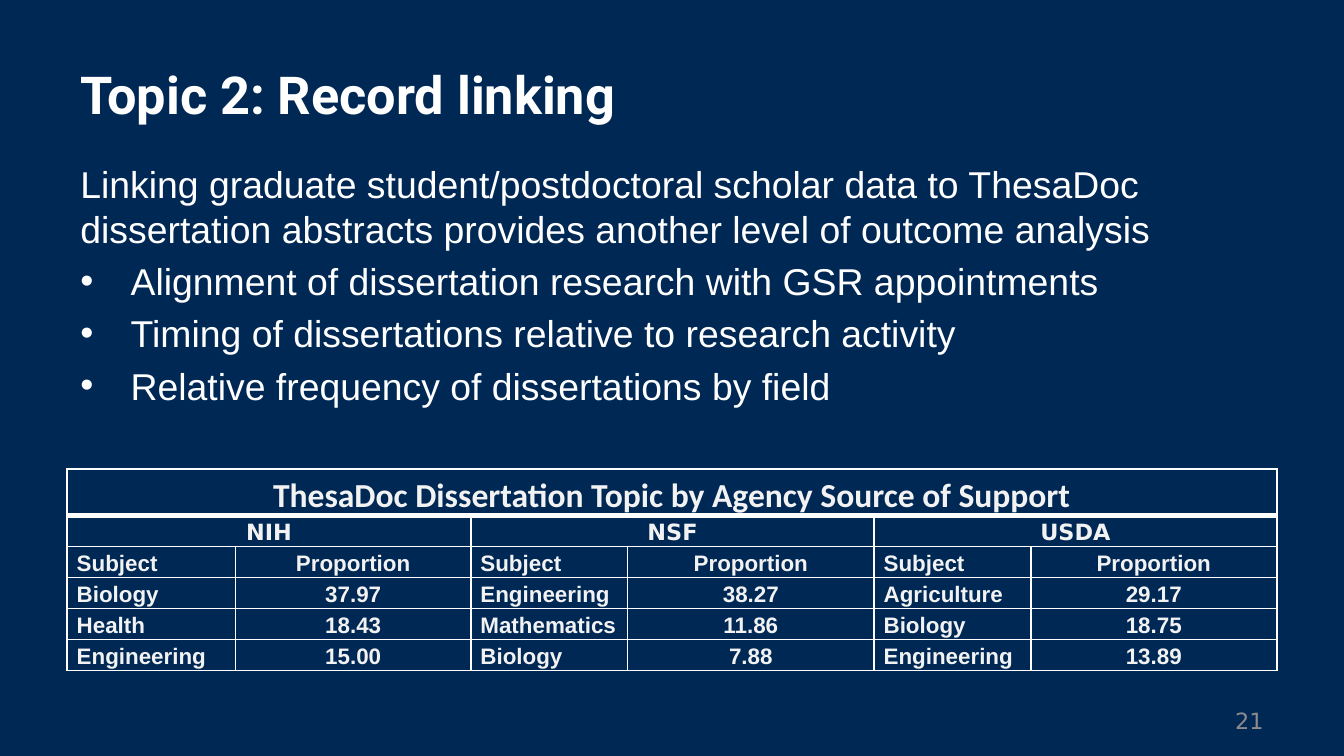
from dataclasses import dataclass

from lxml import etree
from pptx import Presentation
from pptx.dml.color import RGBColor
from pptx.enum.text import MSO_ANCHOR, PP_ALIGN
from pptx.oxml.ns import qn
from pptx.util import Cm, Pt

LEFT, CENTER, RIGHT = PP_ALIGN.LEFT, PP_ALIGN.CENTER, PP_ALIGN.RIGHT
TOP, MIDDLE = MSO_ANCHOR.TOP, MSO_ANCHOR.MIDDLE


@dataclass(frozen=True)
class Theme:
    background: str = "002855"
    text: str = "FFFFFF"
    table_text: str = "F2F2F2"
    muted: str = "8C8C8C"
    title_size: int = 28
    body_size: int = 20
    caption_size: int = 18
    small_size: int = 12
    title_font: str = "Roboto"
    body_font: str = "Arial"
    caption_font: str = "Calibri"
    agency_font: str = "DejaVu Sans"


THEME = Theme()
MARGIN = 1.27
CONTENT_WIDTH = 22.86
COLUMN_WIDTHS = [3.18, 4.45, 2.96, 4.66, 2.96, 4.65]
ROW_HEIGHT = 0.54
BULLET_INDENT = 0.95

INTRODUCTION = (
    "Linking graduate student/postdoctoral scholar data to ThesaDoc "
    "dissertation abstracts provides another level of outcome analysis"
)
BULLETS = [
    "Alignment of dissertation research with GSR appointments",
    "Timing of dissertations relative to research activity",
    "Relative frequency of dissertations by field",
]
CAPTION = "ThesaDoc Dissertation Topic by Agency Source of Support"
AGENCIES = ["NIH", "NSF", "USDA"]
SUBJECT_ROWS = [
    ["Subject", "Proportion"] * len(AGENCIES),
    ["Biology", "37.97", "Engineering", "38.27", "Agriculture", "29.17"],
    ["Health", "18.43", "Mathematics", "11.86", "Biology", "18.75"],
    ["Engineering", "15.00", "Biology", "7.88", "Engineering", "13.89"],
]


def set_attributes(target, values):
    for name, value in values.items():
        setattr(target, name, value)


def write_paragraph(paragraph, text, font, size, color, bold=False, **paragraph_format):
    run = paragraph.add_run()
    run.text = text
    set_attributes(run.font, {"name": font, "size": Pt(size), "bold": bold})
    run.font.color.rgb = RGBColor.from_string(color)
    set_attributes(paragraph, paragraph_format)


def add_text_box(slide, left, top, width, height, anchor):
    box = slide.shapes.add_textbox(Cm(left), Cm(top), Cm(width), Cm(height))
    set_attributes(box.text_frame, {"word_wrap": True, "vertical_anchor": anchor})
    return box.text_frame


def add_bullet(paragraph):
    properties = paragraph._p.get_or_add_pPr()
    properties.set("marL", str(Cm(BULLET_INDENT)))
    properties.set("indent", str(-Cm(BULLET_INDENT)))
    etree.SubElement(properties, qn("a:buFont"), typeface="Arial")
    etree.SubElement(properties, qn("a:buChar"), char="•")


def set_borders(cell, bottom_width=1):
    """Draw a one-point border, with its own width at the bottom."""
    properties = cell._tc.get_or_add_tcPr()
    widths = {"a:lnL": 1, "a:lnR": 1, "a:lnT": 1, "a:lnB": bottom_width}
    for position, (tag, width) in enumerate(widths.items()):
        line = etree.Element(qn(tag), w=str(Pt(width)))
        fill = etree.SubElement(line, qn("a:solidFill"))
        etree.SubElement(fill, qn("a:srgbClr"), val=THEME.text)
        properties.insert(position, line)


def write_cell(cell, text, font=THEME.body_font, size=THEME.small_size, alignment=CENTER):
    set_attributes(cell, {
        "margin_left": Cm(0.18), "margin_right": Cm(0.18),
        "margin_top": 0, "margin_bottom": 0, "vertical_anchor": MIDDLE,
    })
    write_paragraph(cell.text_frame.paragraphs[0], text, font, size,
                    THEME.table_text, True, alignment=alignment, line_spacing=1.15)


def add_title(slide):
    frame = add_text_box(slide, MARGIN, 0.58, CONTENT_WIDTH, 2.39, MIDDLE)
    write_paragraph(frame.paragraphs[0], "Topic 2: Record linking", THEME.title_font,
                    THEME.title_size, THEME.text, True)


def add_body(slide):
    frame = add_text_box(slide, MARGIN, 2.92, CONTENT_WIDTH, 5.51, TOP)
    for index, text in enumerate([INTRODUCTION, *BULLETS]):
        paragraph = frame.add_paragraph() if index else frame.paragraphs[0]
        write_paragraph(paragraph, text, THEME.body_font, THEME.body_size,
                        THEME.text, space_before=Pt(4))
        if index:
            add_bullet(paragraph)


def add_topic_table(slide):
    row_count = len(SUBJECT_ROWS) + 2
    table = slide.shapes.add_table(
        row_count, len(COLUMN_WIDTHS), Cm(MARGIN), Cm(8.87),
        Cm(CONTENT_WIDTH), Cm(ROW_HEIGHT * row_count)).table
    set_attributes(table, {"first_row": False, "horz_banding": False})
    for column, width in zip(table.columns, COLUMN_WIDTHS):
        column.width = Cm(width)
    for index, row in enumerate(table.rows):
        row.height = Cm(ROW_HEIGHT)
        for cell in row.cells:
            cell.fill.background()
            set_borders(cell, 1 if index else 3)

    table.cell(0, 0).merge(table.cell(0, len(COLUMN_WIDTHS) - 1))
    write_cell(table.cell(0, 0), CAPTION, THEME.caption_font, THEME.caption_size)
    for index, agency in enumerate(AGENCIES):
        cell = table.cell(1, 2 * index)
        cell.merge(table.cell(1, 2 * index + 1))
        write_cell(cell, agency, THEME.agency_font)
    for row_index, values in enumerate(SUBJECT_ROWS, start=2):
        for column_index, value in enumerate(values):
            write_cell(table.cell(row_index, column_index), value,
                       alignment=CENTER if column_index % 2 else LEFT)


def add_page_number(slide):
    frame = add_text_box(slide, 18.2, 13.24, 5.93, 0.76, MIDDLE)
    write_paragraph(frame.paragraphs[0], "21", THEME.agency_font, THEME.small_size,
                    THEME.muted, alignment=RIGHT)


def main():
    presentation = Presentation()
    set_attributes(presentation, {"slide_width": Cm(25.4), "slide_height": Cm(14.29)})
    slide = presentation.slides.add_slide(presentation.slide_layouts[6])
    slide.background.fill.solid()
    slide.background.fill.fore_color.rgb = RGBColor.from_string(THEME.background)
    add_title(slide)
    add_body(slide)
    add_topic_table(slide)
    add_page_number(slide)
    presentation.save("out.pptx")


if __name__ == "__main__":
    main()
